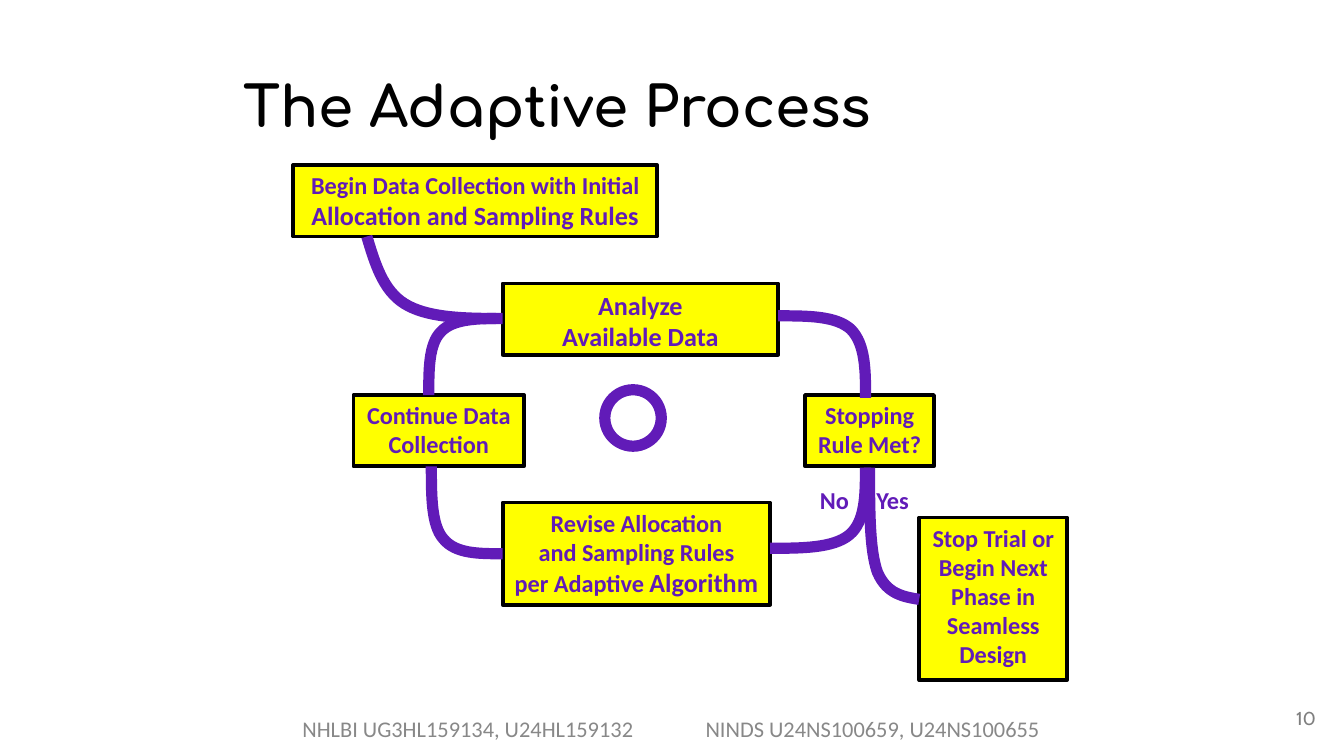
from lxml.etree import SubElement
from pptx import Presentation
from pptx.dml.color import RGBColor
from pptx.enum.shapes import MSO_SHAPE as Shape
from pptx.enum.text import MSO_ANCHOR as Anchor, MSO_AUTO_SIZE as AutoSize, PP_ALIGN as Align
from pptx.oxml.ns import qn
from pptx.util import Inches, Pt

PURPLE, YELLOW, BLACK = "611BB8", "FFFF00", "000000"
GREY, LIGHT_GREY = "7F7F7F", "888888"

# Each box: left, top, width, height, lines, text size
BOXES = [
    (3.74, 2.11, 2.05, 0.53, ["Analyze", "Available Data"], 14),
    (2.63, 2.94, 1.27, 0.53, ["Continue Data", "Collection"], 13),
    (5.99, 2.94, 0.96, 0.53, ["Stopping", "Rule Met?"], 13),
    (6.84, 3.85, 1.10, 1.21,
     ["Stop Trial or", "Begin Next", "Phase in", "Seamless", "Design"], 13),
]
BEGIN_BOX = (2.18, 1.23, 2.71, 0.53,
             ["Begin Data Collection with Initial", "Allocation and Sampling Rules"], 13)
REVISE_BOX = (3.74, 3.74, 1.99, 0.76,
              ["Revise Allocation", "and Sampling Rules", "per Adaptive "], 13)

# Each curve: a start point, then three points for every Bezier segment
CURVES = [
    [(2.73, 1.76), (2.79, 1.96), (2.85, 2.16), (3.01, 2.26),
     (3.17, 2.36), (3.43, 2.37), (3.69, 2.37)],
    [(3.19, 2.94), (3.19, 2.75), (3.19, 2.56), (3.28, 2.47),
     (3.37, 2.37), (3.56, 2.37), (3.74, 2.37)],
    [(6.44, 3.48), (6.44, 3.68), (6.44, 3.88), (6.32, 3.98),
     (6.20, 4.08), (5.96, 4.08), (5.73, 4.08)],
    [(5.79, 2.35), (6.01, 2.35), (6.22, 2.35), (6.33, 2.45),
     (6.44, 2.56), (6.44, 2.76), (6.44, 2.96)],
    [(3.74, 4.12), (3.56, 4.12), (3.39, 4.12), (3.30, 4.01),
     (3.21, 3.91), (3.21, 3.69), (3.21, 3.47)],
    [(6.47, 3.48), (6.47, 3.79), (6.47, 4.10), (6.53, 4.26),
     (6.60, 4.42), (6.72, 4.44), (6.84, 4.46)],
]


def color(hex_string):
    return RGBColor.from_string(hex_string)


def format_run(run, size, hex_string, name="Calibri", bold=True):
    run.font.size, run.font.name, run.font.bold = Pt(size), name, bold
    run.font.color.rgb = color(hex_string)


def set_frame(frame, horizontal=0.07, vertical=0.04, anchor=Anchor.TOP):
    frame.margin_left = frame.margin_right = Inches(horizontal)
    frame.margin_top = frame.margin_bottom = Inches(vertical)
    frame.vertical_anchor = anchor
    frame.auto_size = AutoSize.NONE
    frame.word_wrap = True


def set_outline(shape, hex_string, width):
    shape.shadow.inherit = False
    shape.line.color.rgb = color(hex_string)
    shape.line.width = Pt(width)


def add_title(slide, text):
    title = slide.shapes.title
    title.left, title.top, title.width, title.height = map(Inches, (1.74, 0.31, 5.32, 0.94))
    set_frame(title.text_frame, anchor=Anchor.MIDDLE)
    title.text_frame.text = text
    paragraph = title.text_frame.paragraphs[0]
    paragraph.alignment = Align.LEFT
    format_run(paragraph.runs[0], 30, BLACK, "Comfortaa")


def add_box(slide, left, top, width, height, lines, size):
    box = slide.shapes.add_shape(Shape.RECTANGLE, *map(Inches, (left, top, width, height)))
    box.fill.solid()
    box.fill.fore_color.rgb = color(YELLOW)
    set_outline(box, BLACK, 2)
    set_frame(box.text_frame)
    box.text_frame.text = "\n".join(lines)
    for paragraph in box.text_frame.paragraphs:
        paragraph.alignment = Align.CENTER
        format_run(paragraph.runs[0], size, PURPLE)
    return box


def add_curve(slide, points):
    points = [(Inches(x), Inches(y)) for x, y in points]
    builder = slide.shapes.build_freeform(*points[0])
    builder.add_line_segments(points[1:], close=False)
    curve = builder.convert_to_shape()
    curve.fill.background()
    set_outline(curve, PURPLE, 6)
    # Turn every three straight segments into one Bezier segment
    outline = next(curve._element.iter(qn("a:path")))
    segments = outline.findall(qn("a:lnTo"))
    for start in range(0, len(segments), 3):
        bezier = SubElement(outline, qn("a:cubicBezTo"))
        for segment in segments[start:start + 3]:
            bezier.append(segment[0])
            outline.remove(segment)


def add_ring(slide):
    ring = slide.shapes.add_shape(Shape.OVAL, *map(Inches, (4.5, 2.9, 0.42, 0.42)))
    ring.fill.background()
    set_outline(ring, PURPLE, 6)


def add_text(slide, place, text, size, hex_string, name="Calibri", bold=False,
             align=Align.LEFT, margins=(0.1, 0.1), anchor=Anchor.MIDDLE, tab=None):
    box = slide.shapes.add_textbox(*map(Inches, place))
    frame = box.text_frame
    set_frame(frame, *margins, anchor)
    frame.text = text
    paragraph = frame.paragraphs[0]
    paragraph.alignment = align
    if tab:
        tabs = SubElement(paragraph._p.get_or_add_pPr(), qn("a:tabLst"))
        SubElement(tabs, qn("a:tab"), pos=str(Inches(tab)), algn="l")
    format_run(paragraph.runs[0], size, hex_string, name, bold)
    return box


def main():
    presentation = Presentation()
    # Widescreen, 16 to 9
    presentation.slide_width = Inches(10)
    presentation.slide_height = Inches(10) * 9 // 16
    slide = presentation.slides.add_slide(presentation.slide_layouts[5])

    # Funding footer and title
    footer = add_text(slide, (1.98, 5.22, 6.04, 0.4),
                      "NHLBI UG3HL159134, U24HL159132\tNINDS U24NS100659, U24NS100655",
                      12, LIGHT_GREY, tab=3)
    footer.text_frame.margin_left = Inches(0.27)
    add_title(slide, "The Adaptive Process")

    # Process steps, two of them with larger closing words
    for box in BOXES:
        add_box(slide, *box)
    begin = add_box(slide, *BEGIN_BOX)
    begin.text_frame.paragraphs[1].runs[0].font.size = Pt(14)
    revise = add_box(slide, *REVISE_BOX)
    algorithm = revise.text_frame.paragraphs[2].add_run()
    algorithm.text = "Algorithm"
    format_run(algorithm, 14, PURPLE)

    # Links between the steps, and the ring at the centre of the loop
    for points in CURVES:
        add_curve(slide, points)
    add_ring(slide)

    # Decision labels and slide number
    add_text(slide, (6.03, 3.57, 0.85, 0.3), "No\tYes", 13, PURPLE, bold=True,
             margins=(0.07, 0.04), anchor=Anchor.TOP, tab=0.42)
    add_text(slide, (9.29, 5.13, 0.6, 0.43), "10", 10, GREY, "Cabin", align=Align.RIGHT)

    presentation.save("out.pptx")


if __name__ == "__main__":
    main()
